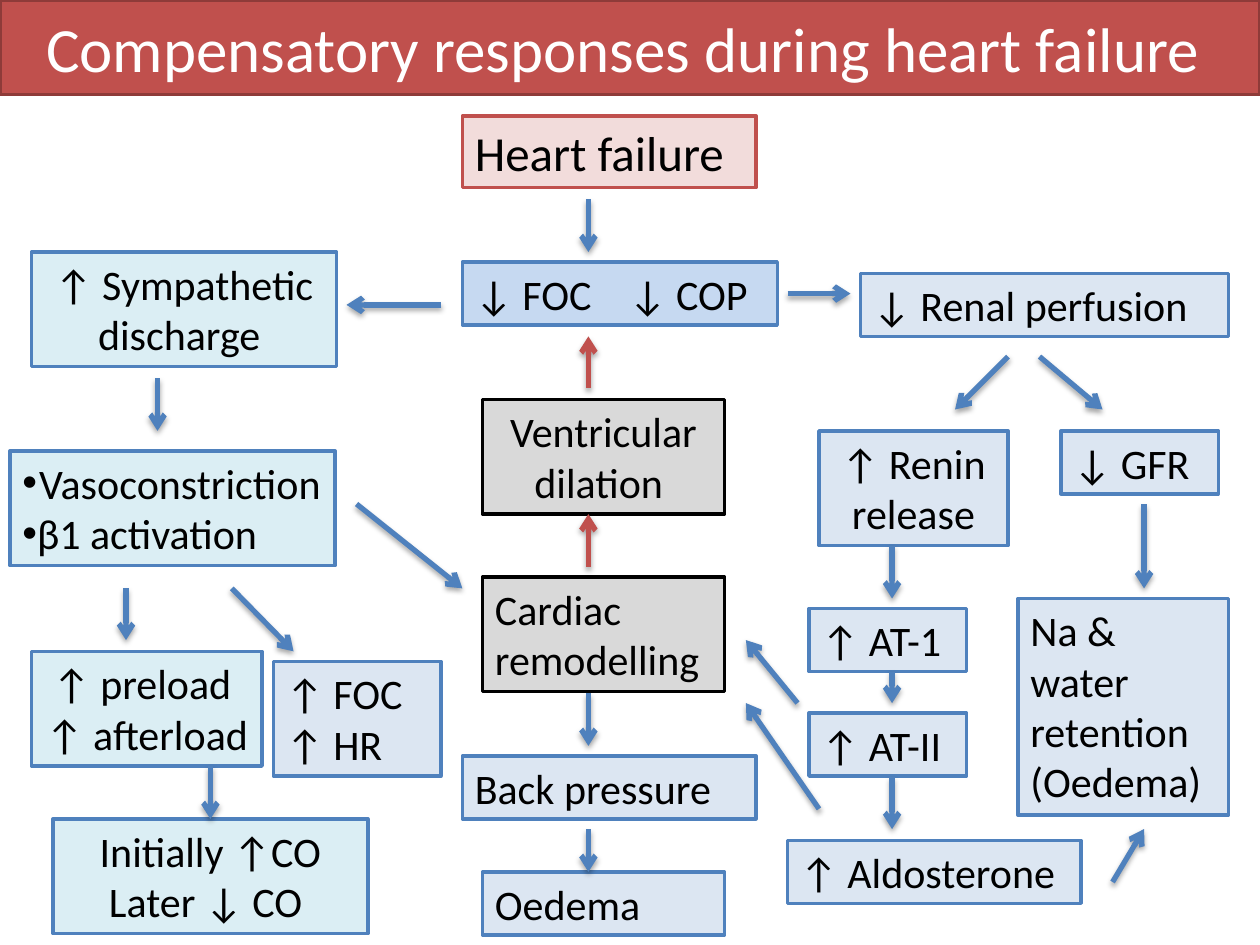
from lxml import etree
from pptx import Presentation
from pptx.dml.color import RGBColor
from pptx.enum.shapes import MSO_CONNECTOR as Connector, MSO_SHAPE as Shape
from pptx.enum.text import MSO_ANCHOR as Anchor, PP_ALIGN as Align
from pptx.oxml.ns import qn
from pptx.util import Inches, Pt

COLORS = {
    "white": "FFFFFF", "black": "000000", "red": "C0504D", "dark_red": "8E3B39",
    "pink": "F2DCDB", "blue": "4F81BD", "sky": "C6D9F1", "pale": "DCE6F2",
    "aqua": "DBEEF4", "gray": "D9D9D9",
}


def color(name):
    return RGBColor.from_string(COLORS[name])


class FlowPage:
    font = "Calibri"
    box_line = 2
    arrow_line = 3

    def __init__(self, deck):
        self.page = deck.slides.add_slide(deck.slide_layouts[6])

    def box(self, left, top, width, height, text, fill="pale", line="blue",
            size=24, ink="black", align=Align.LEFT, anchor=Anchor.TOP):
        box = self.page.shapes.add_shape(
            Shape.RECTANGLE, Inches(left), Inches(top), Inches(width), Inches(height))
        box.shadow.inherit = False
        box.fill.solid()
        box.fill.fore_color.rgb = color(fill)
        box.line.color.rgb = color(line)
        box.line.width = Pt(self.box_line)
        frame = box.text_frame
        frame.word_wrap = True
        frame.vertical_anchor = anchor
        frame.text = text
        for para in frame.paragraphs:
            para.alignment = align
            for span in para.runs:
                span.font.name = self.font
                span.font.size = Pt(size)
                span.font.color.rgb = color(ink)
        return box

    def bullets(self, box):
        for para in box.text_frame.paragraphs:
            props = para._p.get_or_add_pPr()
            etree.SubElement(props, qn("a:buFont"), typeface="Arial")
            etree.SubElement(props, qn("a:buChar"), char="•")

    def tab_stop(self, box, position):
        for para in box.text_frame.paragraphs:
            tabs = etree.SubElement(para._p.get_or_add_pPr(), qn("a:tabLst"))
            etree.SubElement(tabs, qn("a:tab"), pos=str(Inches(position)), algn="l")

    def arrow(self, x1, y1, x2, y2, line="blue"):
        arrow = self.page.shapes.add_connector(
            Connector.STRAIGHT, Inches(x1), Inches(y1), Inches(x2), Inches(y2))
        arrow.line.color.rgb = color(line)
        arrow.line.width = Pt(self.arrow_line)
        etree.SubElement(arrow.line._get_or_add_ln(), qn("a:tailEnd"), type="arrow")
        effects = etree.SubElement(arrow._element.spPr, qn("a:effectLst"))
        shadow = etree.SubElement(
            effects, qn("a:outerShdw"), blurRad=str(Pt(3.1)), dist=str(Pt(1.8)),
            dir="5400000", rotWithShape="0")
        tint = etree.SubElement(shadow, qn("a:srgbClr"), val=COLORS["black"])
        etree.SubElement(tint, qn("a:alpha"), val="35000")
        return arrow


def main():
    deck = Presentation()
    deck.slide_width, deck.slide_height = Inches(10), Inches(7.5)
    flow = FlowPage(deck)
    one, two = 0.5, 0.91
    center = Align.CENTER

    flow.box(0, 0, 10, 0.75, "Compensatory responses during heart failure ",
             "red", "dark_red", 36, "white", center, Anchor.MIDDLE)
    flow.box(3.67, 0.92, 2.33, 0.57, "Heart failure", "pink", "red", 28)
    output = flow.box(3.67, 2.08, 2.5, one, "↓ FOC\t↓ COP", "sky")
    flow.tab_stop(output, 1.22)

    flow.box(0.25, 2, 2.42, two, "↑ Sympathetic discharge ", "aqua", align=center)
    activation = flow.box(0.08, 3.58, 2.58, two, "Vasoconstriction\nβ1 activation", "aqua")
    activation.text_frame.paragraphs[0].alignment = center
    flow.bullets(activation)
    flow.box(0.25, 5.17, 1.83, two, "↑ preload \n↑ afterload ", "aqua", align=center)
    flow.box(2.17, 5.25, 1.33, two, "↑ FOC\n↑ HR")
    cardiac_output = flow.box(0.42, 6.5, 2.5, two, "Initially ↑CO Later ↓ CO ",
                              "aqua", align=center)

    flow.box(3.83, 3.17, 1.92, two, "Ventricular dilation ", "gray", "black", align=center)
    flow.box(3.83, 4.58, 1.92, two, "Cardiac remodelling", "gray", "black")
    flow.box(3.67, 6, 2.33, one, "Back pressure")
    flow.box(3.83, 6.92, 1.92, one, "Oedema")

    flow.box(6.83, 2.17, 2.92, one, "↓ Renal perfusion")
    flow.box(6.5, 3.42, 1.5, two, "↑ Renin release", align=center)
    flow.box(8.42, 3.42, 1.25, one, "↓ GFR")
    flow.box(6.42, 4.83, 1.25, one, "↑ AT-1")
    flow.box(6.42, 5.66, 1.25, one, "↑ AT-II")
    flow.box(6.25, 6.67, 2.33, one, "↑ Aldosterone")
    flow.box(8.08, 4.75, 1.67, 1.72, "Na & water retention\n(Oedema)")

    vertical_arrows = {
        1: [(4.67, 5.08)],
        1.25: [(3, 3.42)],
        4.67: [(1.58, 2), (5.5, 5.92), (6.58, 6.92)],
        7.08: [(4.33, 4.75), (5.33, 5.58), (6.17, 6.58)],
        9.08: [(4, 4.67)],
    }
    for x, spans in vertical_arrows.items():
        for start, end in spans:
            flow.arrow(x, start, x, end)
    for start, end in [(3.08, 2.67), (4.5, 4.08)]:
        flow.arrow(4.67, start, 4.67, end, "red")
    for ends in [
        (3.5, 2.42, 2.75, 2.42), (6.25, 2.33, 6.75, 2.33),
        (1.84, 4.67, 2.33, 5.17), (2.83, 4, 3.67, 4.67),
        (8, 2.83, 7.58, 3.25), (8.25, 2.83, 8.75, 3.25),
        (6.33, 5.58, 5.92, 5.08), (6.5, 6.42, 5.92, 5.58),
        (8.83, 7, 9.08, 6.58),
    ]:
        flow.arrow(*ends)
    flow.arrow(1.67, 6.08, 1.67, 6.5).end_connect(cardiac_output, 0)

    deck.save("out.pptx")


if __name__ == "__main__":
    main()
